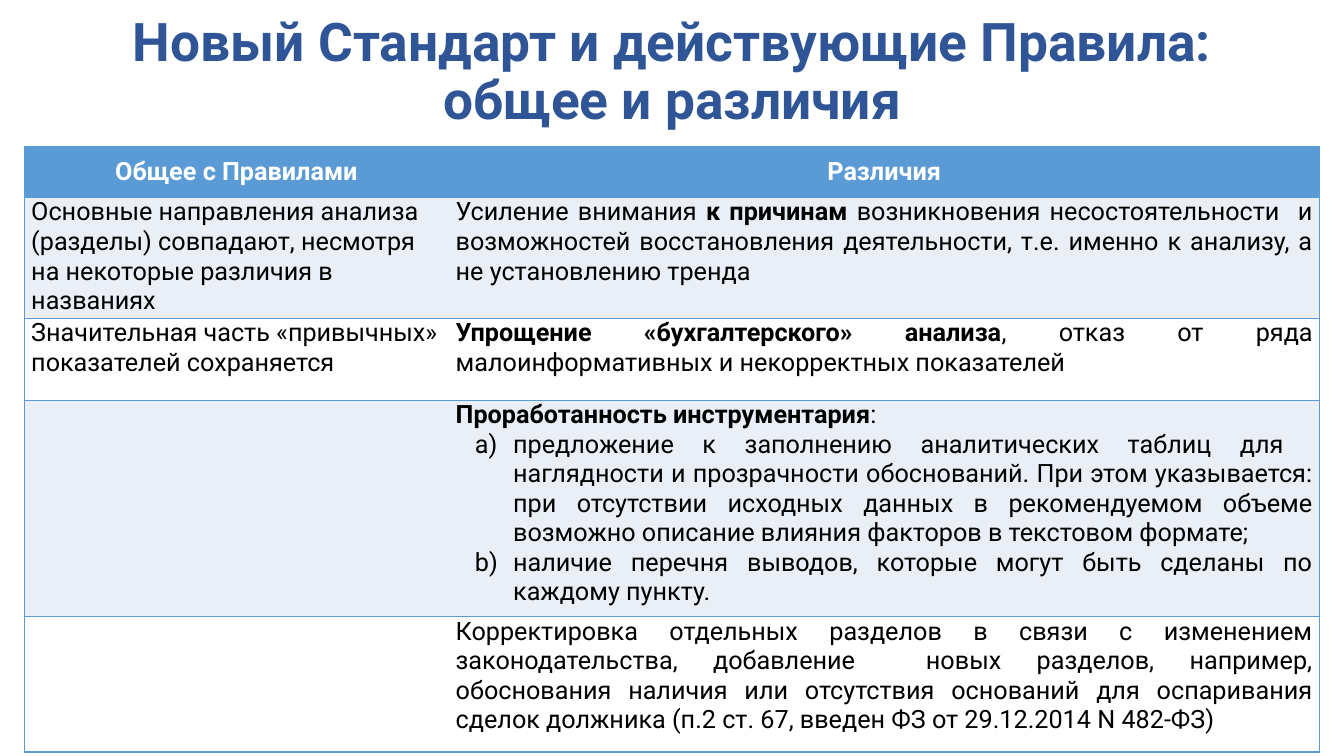
from lxml import etree
from pptx import Presentation
from pptx.dml.color import RGBColor
from pptx.enum.text import MSO_ANCHOR, PP_ALIGN
from pptx.oxml.ns import qn
from pptx.util import Inches, Pt

CENTER, LEFT, JUSTIFY = PP_ALIGN.CENTER, PP_ALIGN.LEFT, PP_ALIGN.JUSTIFY
MIDDLE, TOP = MSO_ANCHOR.MIDDLE, MSO_ANCHOR.TOP

THEME = {
    "font": "Roboto", "title_size": 38, "body_size": 18,
    "title": "2F5597", "accent": "5B9BD5", "band": "EAEFF7",
    "white": "FFFFFF", "text": "000000",
}
COLUMNS = [4.21, 8.64]
ROWS = [0.51, 1.07, 0.81, 2.15, 1.34]
CELL_MARGIN = 0.07
LIST_INDENT, LIST_HANGING = 0.57, 0.38

# Each cell is a list of paragraphs: (is list item, [(text, bold), ...])
CELLS = [
    [[(False, [("Общее с Правилами", True)])],
     [(False, [("Различия", True)])]],
    [[(False, [("Основные направления анализа (разделы) совпадают, несмотря "
                "на некоторые различия в названиях", False)])],
     [(False, [("Усиление внимания ", False), ("к причинам ", True),
               ("возникновения несостоятельности  и возможностей восстановления "
                "деятельности, т.е. именно к анализу, а не установлению тренда", False)])]],
    [[(False, [("Значительная часть «привычных» показателей сохраняется", False)])],
     [(False, [("Упрощение «бухгалтерского» анализа", True),
               (", отказ от ряда малоинформативных и некорректных показателей", False)])]],
    [[],
     [(False, [("Проработанность инструментария", True), (": ", False)]),
      (True, [("предложение к заполнению аналитических таблиц для  наглядности и "
               "прозрачности обоснований. При этом указывается: при отсутствии исходных "
               "данных в рекомендуемом объеме возможно описание влияния факторов в "
               "текстовом формате;", False)]),
      (True, [("наличие перечня выводов, которые могут быть сделаны по каждому пункту.",
               False)])]],
    [[],
     [(False, [("Корректировка отдельных разделов в связи с изменением законодательства, "
                "добавление  новых разделов, например, обоснования наличия или отсутствия "
                "оснований для оспаривания сделок должника (п.2 ст. 67, введен ФЗ от "
                "29.12.2014 N 482-ФЗ)", False)])]],
]


def add_run(p, text, size, color, bold):
    r = p.add_run()
    r.text = text
    r.font.name = THEME["font"]
    r.font.size = Pt(size)
    r.font.bold = bold
    r.font.color.rgb = RGBColor.from_string(color)


def set_borders(cell, visible):
    """Draw the named sides (L, R, T, B) in the accent colour and clear the others."""
    tc_pr = cell._tc.get_or_add_tcPr()
    for i, side in enumerate("LRTB"):
        ln = etree.Element(qn(f"a:ln{side}"), w=str(Pt(1)))
        if side in visible:
            fill = etree.SubElement(ln, qn("a:solidFill"))
            etree.SubElement(fill, qn("a:srgbClr"), val=THEME["accent"])
        else:
            etree.SubElement(ln, qn("a:noFill"))
        tc_pr.insert(i, ln)


prs = Presentation()
prs.slide_width, prs.slide_height = Inches(13.33), Inches(7.5)
s = prs.slides.add_slide(prs.slide_layouts[6])

# Title
tf = s.shapes.add_textbox(Inches(0.92), 0, Inches(11.5), Inches(1.45)).text_frame
tf.word_wrap = True
tf.vertical_anchor = MIDDLE
p = tf.paragraphs[0]
p.alignment = CENTER
p.line_spacing = 0.9
add_run(p, "Новый Стандарт и действующие Правила: общее и различия",
        THEME["title_size"], THEME["title"], True)

# Comparison table
table = s.shapes.add_table(len(ROWS), len(COLUMNS), Inches(0.24), Inches(1.45),
                           Inches(sum(COLUMNS)), Inches(sum(ROWS))).table
for column, width in zip(table.columns, COLUMNS):
    column.width = Inches(width)

for i, (height, row) in enumerate(zip(ROWS, CELLS)):
    table.rows[i].height = Inches(height)
    header = i == 0
    fill = THEME["accent"] if header else THEME["band"] if i % 2 else THEME["white"]
    color = THEME["white"] if header else THEME["text"]
    for j, paragraphs in enumerate(row):
        cell = table.cell(i, j)
        cell.margin_left = cell.margin_right = Inches(CELL_MARGIN)
        cell.margin_top = cell.margin_bottom = 0
        cell.vertical_anchor = MIDDLE if header else TOP
        cell.fill.solid()
        cell.fill.fore_color.rgb = RGBColor.from_string(fill)
        set_borders(cell, "RTB" if j else "LTB")
        tf = cell.text_frame
        for k, (is_item, runs) in enumerate(paragraphs):
            p = tf.add_paragraph() if k else tf.paragraphs[0]
            p.alignment = CENTER if header else JUSTIFY if j else LEFT
            if is_item:
                p_pr = p._p.get_or_add_pPr()
                p_pr.set("marL", str(Inches(LIST_INDENT)))
                p_pr.set("indent", str(-Inches(LIST_HANGING)))
                etree.SubElement(p_pr, qn("a:buFont"), typeface=THEME["font"])
                etree.SubElement(p_pr, qn("a:buAutoNum"), type="alphaLcParenR")
            for text, bold in runs:
                add_run(p, text, THEME["body_size"], color, bold)

prs.save("out.pptx")
